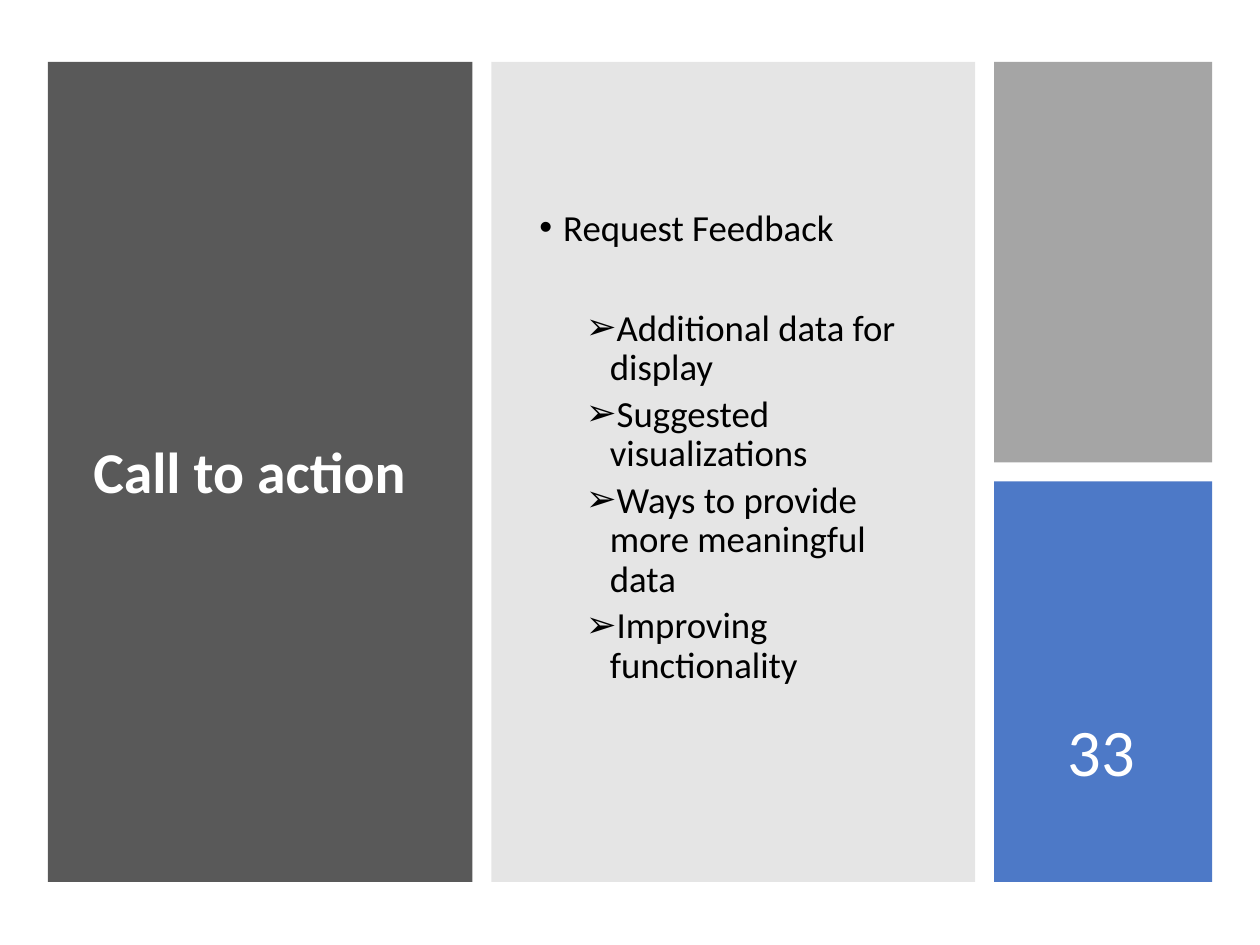
from lxml.etree import SubElement
from pptx import Presentation
from pptx.dml.color import RGBColor
from pptx.enum.shapes import MSO_SHAPE
from pptx.enum.text import MSO_ANCHOR, MSO_AUTO_SIZE, PP_ALIGN
from pptx.oxml.ns import qn
from pptx.util import Inches, Pt

CHARCOAL = RGBColor(0x59, 0x59, 0x59)
MID_GRAY = RGBColor(0x80, 0x80, 0x80)
LIGHT_GRAY = RGBColor(0xA5, 0xA5, 0xA5)
BLUE = RGBColor(0x44, 0x72, 0xC4)
WHITE = RGBColor(0xFF, 0xFF, 0xFF)
BLACK = RGBColor(0x00, 0x00, 0x00)

PANEL_TOP, PANEL_HEIGHT, GAP = 0.49, 6.51, 0.15
TILE_HEIGHT = (PANEL_HEIGHT - GAP) / 2
FEEDBACK_REQUESTS = [
    "Additional data for display",
    "Suggested visualizations",
    "Ways to provide more meaningful data",
    "Improving functionality",
]


class SlideBuilder:
    """Holds the text style and the current slide, and adds its elements."""

    font_name = "Calibri"

    def __init__(self, slide):
        self.slide = slide

    def panel(self, left, top, width, height, color, opacity=100):
        shape = self.slide.shapes.add_shape(
            MSO_SHAPE.RECTANGLE, Inches(left), Inches(top), Inches(width), Inches(height))
        shape.shadow.inherit = False
        shape.fill.solid()
        shape.fill.fore_color.rgb = color
        shape.line.fill.background()
        if opacity < 100:
            color_element = shape.element.spPr.find(qn("a:solidFill"))[0]
            SubElement(color_element, qn("a:alpha"), val=str(opacity * 1000))

    def run(self, paragraph, text, size, color, bold=False):
        run = paragraph.add_run()
        run.text = text
        run.font.name = self.font_name
        run.font.size = Pt(size)
        run.font.bold = bold
        run.font.color.rgb = color

    def frame(self, shape):
        text_frame = shape.text_frame
        text_frame.word_wrap = True
        text_frame.auto_size = MSO_AUTO_SIZE.NONE
        text_frame.vertical_anchor = MSO_ANCHOR.MIDDLE
        return text_frame

    def placeholder(self, index, left, top, width, height):
        shape = self.slide.placeholders[index]
        shape.left, shape.top = Inches(left), Inches(top)
        shape.width, shape.height = Inches(width), Inches(height)
        shape.element.getparent().append(shape.element)
        return self.frame(shape)

    def title(self, text, *box):
        paragraph = self.placeholder(0, *box).paragraphs[0]
        paragraph.alignment = PP_ALIGN.LEFT
        paragraph.line_spacing = 0.9
        self.run(paragraph, text, 33, WHITE, bold=True)

    def bullet(self, paragraph, text, character, level, indent, space_before):
        paragraph.level = level
        paragraph.line_spacing = 0.9
        paragraph.space_before = Pt(space_before)
        properties = paragraph._p.get_or_add_pPr()
        properties.set("marL", str(Inches(indent)))
        properties.set("indent", str(Inches(-0.19)))
        SubElement(properties, qn("a:buFont"), typeface="Arial")
        SubElement(properties, qn("a:buChar"), char=character)
        self.run(paragraph, text, 21, BLACK)

    def feedback_list(self, heading, items, *box):
        text_frame = self.placeholder(1, *box)
        text_frame.margin_bottom = Inches(0.47)
        self.bullet(text_frame.paragraphs[0], heading, "•", 0, 0.19, 7.5)
        for position, item in enumerate(items):
            space_before = 3.8 if position else 34.4
            self.bullet(text_frame.add_paragraph(), item, "➢", 1, 0.56, space_before)

    def page_number(self, text, left, top, width, height):
        shape = self.slide.shapes.add_textbox(
            Inches(left), Inches(top), Inches(width), Inches(height))
        paragraph = self.frame(shape).paragraphs[0]
        paragraph.alignment = PP_ALIGN.CENTER
        paragraph.space_after = Pt(6)
        self.run(paragraph, text, 38, WHITE)


def main():
    presentation = Presentation()
    presentation.slide_width, presentation.slide_height = Inches(10), Inches(7.5)
    builder = SlideBuilder(presentation.slides.add_slide(presentation.slide_layouts[1]))

    builder.panel(0.38, PANEL_TOP, 3.37, PANEL_HEIGHT, CHARCOAL)
    builder.title("Call to action", 0.64, 0.83, 2.88, 5.87)
    builder.panel(3.9, PANEL_TOP, 3.84, PANEL_HEIGHT, MID_GRAY, opacity=20)
    builder.feedback_list("Request Feedback", FEEDBACK_REQUESTS, 4.18, 0.83, 3.32, 5.87)
    builder.panel(7.89, PANEL_TOP, 1.73, TILE_HEIGHT, LIGHT_GRAY)
    builder.panel(7.89, PANEL_TOP + TILE_HEIGHT + GAP, 1.73, TILE_HEIGHT, BLUE, opacity=95)
    builder.page_number("33", 8.14, 5.28, 1.2, 1.35)

    presentation.save("out.pptx")


if __name__ == "__main__":
    main()
